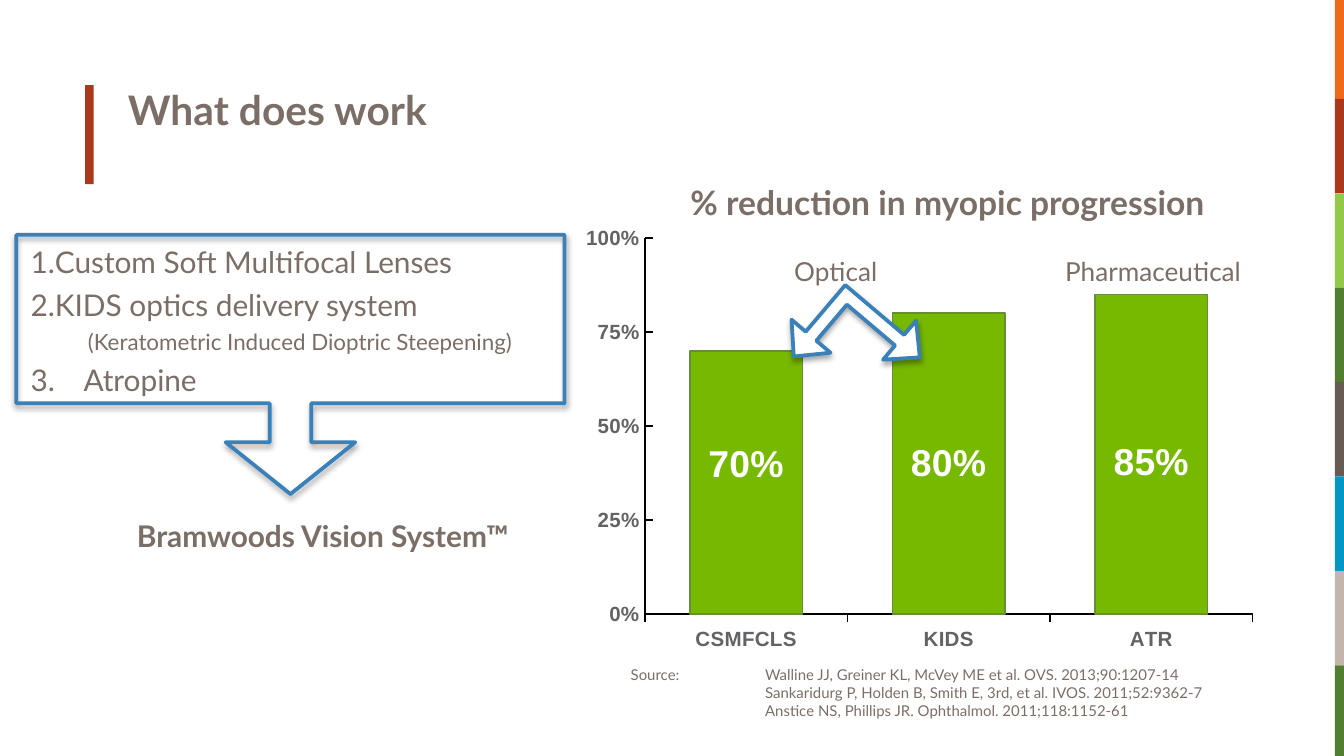
from dataclasses import dataclass

import lxml.etree
import pptx
import pptx.chart.data
import pptx.dml.color
import pptx.enum.chart
import pptx.enum.shapes
import pptx.enum.text
import pptx.oxml
import pptx.oxml.ns
import pptx.util

Cm = pptx.util.Cm
Pt = pptx.util.Pt
SHAPE = pptx.enum.shapes.MSO_SHAPE
ANCHOR = pptx.enum.text.MSO_ANCHOR
TICK = pptx.enum.chart.XL_TICK_MARK
CENTER_LABEL = pptx.enum.chart.XL_LABEL_POSITION.CENTER
NAMESPACES = pptx.oxml.ns.nsdecls("a", "c")


@dataclass(frozen=True)
class Theme:
    text_font: str = "Lato"
    chart_font: str = "Arial"
    text: str = "7B6E66"
    accent: str = "AB371D"
    white: str = "FFFFFF"
    arrow_line: str = "3A81BA"
    bar: str = "77B800"
    bar_line: str = "658D3C"
    axis_text: str = "616365"
    axis_line: str = "000000"
    rail: tuple = ("EF6B1A", "AB371D", "94C84B", "537D2F",
                   "675B54", "0097C4", "C2B6AC", "537D2F")
    title_size: float = 21.8
    heading_size: float = 18
    body_size: float = 16
    label_size: float = 14
    note_size: float = 12
    source_size: float = 8
    axis_size: float = 11
    value_size: float = 20


@dataclass(frozen=True)
class Item:
    """A list line; number is its ordinal or None, indent is in cm."""
    text: str
    indent: float
    size: float
    number: int | None = None


def rgb(value):
    return pptx.dml.color.RGBColor.from_string(value)


def manual_layout(inner, **fractions):
    """Layout element in fractions of the chart; without inner, an offset."""
    target = ('<c:layoutTarget val="inner"/><c:xMode val="edge"/><c:yMode val="edge"/>'
              if inner else "")
    sizes = "".join(f'<c:{key} val="{value}"/>' for key, value in fractions.items())
    return pptx.oxml.parse_xml(
        f'<c:layout {NAMESPACES}><c:manualLayout>{target}{sizes}</c:manualLayout></c:layout>')


class SlideBuilder:
    def __init__(self, page, theme):
        self.page = page
        self.theme = theme

    def style_font(self, font, size, color, bold=False, name=None):
        font.name = name or self.theme.text_font
        font.size = Pt(size)
        font.bold = bold
        font.color.rgb = rgb(color)

    def bar(self, left, top, width, height, color):
        block = self.page.shapes.add_shape(
            SHAPE.RECTANGLE, Cm(left), Cm(top), Cm(width), Cm(height))
        block.shadow.inherit = False
        block.fill.solid()
        block.fill.fore_color.rgb = rgb(color)
        block.line.fill.background()

    def text(self, left, top, width, height, content, size, bold=False,
             inset=0.25, anchor=ANCHOR.TOP, tab=None):
        box = self.page.shapes.add_textbox(Cm(left), Cm(top), Cm(width), Cm(height))
        frame = box.text_frame
        frame.word_wrap = True
        frame.vertical_anchor = anchor
        frame.margin_left = frame.margin_right = Cm(inset)
        frame.margin_top = frame.margin_bottom = Cm(inset)
        frame.text = content
        for para in frame.paragraphs:
            if tab:
                para._p.get_or_add_pPr().append(pptx.oxml.parse_xml(
                    f'<a:tabLst {NAMESPACES}><a:tab pos="{Cm(tab)}" algn="l"/></a:tabLst>'))
            for span in para.runs:
                self.style_font(span.font, size, self.theme.text, bold)
        return frame

    def numbered_list(self, left, top, width, height, items):
        frame = self.text(left, top, width, height,
                          "\n".join(item.text for item in items), self.theme.body_size)
        for para, item in zip(frame.paragraphs, items):
            para.line_spacing = 1.2
            properties = para._p.get_or_add_pPr()
            properties.set("marL", str(Cm(item.indent)))
            if item.number:
                properties.set("indent", str(-Cm(item.indent)))
                # Only a number that follows an interruption states its start.
                start = ' startAt="3"' if item.number == 3 else ""
                properties.append(pptx.oxml.parse_xml(
                    f'<a:buAutoNum {NAMESPACES} type="arabicPeriod"{start}/>'))
            for span in para.runs:
                span.font.size = Pt(item.size)

    def arrow(self, kind, left, top, width, height, adjustments, fill=None, rotation=0):
        arrow = self.page.shapes.add_shape(kind, Cm(left), Cm(top), Cm(width), Cm(height))
        arrow.rotation = rotation
        for index, value in enumerate(adjustments):
            arrow.adjustments[index] = value
        if fill:
            arrow.fill.solid()
            arrow.fill.fore_color.rgb = rgb(fill)
        else:
            arrow.fill.background()
        arrow.line.color.rgb = rgb(self.theme.arrow_line)
        arrow.line.width = Pt(2)
        arrow._element.spPr.append(pptx.oxml.parse_xml(
            f'<a:effectLst {NAMESPACES}><a:outerShdw blurRad="{Pt(3)}" dist="{Pt(1.8)}" '
            'dir="5400000" rotWithShape="0"><a:srgbClr val="000000">'
            '<a:alpha val="35000"/></a:srgbClr></a:outerShdw></a:effectLst>'))

    def column_chart(self, left, top, width, height, categories, values, label_shifts):
        """label_shifts maps a point index to its label's vertical offset."""
        theme = self.theme
        data = pptx.chart.data.CategoryChartData(number_format="0%")
        data.categories = categories
        data.add_series("Series 1", values)
        chart = self.page.shapes.add_chart(
            pptx.enum.chart.XL_CHART_TYPE.COLUMN_STACKED,
            Cm(left), Cm(top), Cm(width), Cm(height), data).chart
        chart.has_legend = False
        chart.has_title = False
        self.style_font(chart.font, 10, theme.axis_line, name=theme.chart_font)

        for axis, tick in ((chart.category_axis, TICK.OUTSIDE), (chart.value_axis, TICK.INSIDE)):
            axis.has_major_gridlines = False
            axis.major_tick_mark = tick
            axis.minor_tick_mark = TICK.NONE
            axis.format.line.color.rgb = rgb(theme.axis_line)
            axis.format.line.width = Pt(1)
            self.style_font(axis.tick_labels.font, theme.axis_size, theme.axis_text,
                            True, theme.chart_font)
        scale = chart.value_axis
        scale.minimum_scale, scale.maximum_scale, scale.major_unit = 0, 1, 0.25
        scale.tick_labels.number_format = "0%"
        scale.tick_labels.number_format_is_linked = False

        plot = chart.plots[0]
        plot.gap_width, plot.overlap = 80, 100
        plot.vary_by_categories = False
        series = plot.series[0]
        series.format.fill.solid()
        series.format.fill.fore_color.rgb = rgb(theme.bar)
        series.format.line.color.rgb = rgb(theme.bar_line)
        series.format.line.width = Pt(1)
        labels = series.data_labels
        labels.show_value = True
        labels.number_format = "0%"
        labels.number_format_is_linked = False
        shifted = {index: series.points[index].data_label for index in label_shifts}
        for label in (labels, *shifted.values()):
            label.position = CENTER_LABEL
            self.style_font(label.font, theme.value_size, theme.white, True, theme.chart_font)
        for entry in labels._element.findall(pptx.oxml.ns.qn("c:dLbl")):
            entry.insert(1, manual_layout(False, x=0, y=label_shifts[entry.idx.val]))

        area = chart._chartSpace.chart.plotArea
        for old in area.findall(pptx.oxml.ns.qn("c:layout")):
            area.remove(old)
        area.insert(0, manual_layout(True, x=0.117, y=0.05, w=0.878, h=0.858))


def main():
    deck = pptx.Presentation()
    deck.slide_width, deck.slide_height = Cm(25.4), Cm(14.29)
    theme = Theme()
    builder = SlideBuilder(deck.slides.add_slide(deck.slide_layouts[6]), theme)

    builder.bar(1.61, 1.61, 0.16, 1.87, theme.accent)
    first_height, rail_bottom = 1.87, 14.36
    step = (rail_bottom - first_height) / (len(theme.rail) - 1)
    for index, color in enumerate(theme.rail):
        top = first_height + (index - 1) * step if index else 0
        builder.bar(25.23, top, 0.38, step if index else first_height, color)

    builder.column_chart(10.66, 4.09, 13.08, 8.28, ("CSMFCLS", "KIDS", "ATR"),
                         (0.7, 0.8, 0.85), {0: -0.04, 2: 0.02})
    builder.text(2.17, 1.35, 22.3, 2.39, "What does work", theme.title_size, True)
    builder.numbered_list(0.33, 4.22, 10.2, 3.4, (
        Item("Custom Soft Multifocal Lenses", 0.46, theme.body_size, 1),
        Item("KIDS optics delivery system", 0.46, theme.body_size, 2),
        Item("(Keratometric Induced Dioptric Steepening)", 1.08, theme.note_size),
        Item("Atropine", 1, theme.body_size, 3)))
    builder.text(2.34, 9.53, 9, 1.2, "Bramwoods Vision System™", theme.body_size, True)
    builder.text(12.8, 3.19, 12.27, 2.39, "% reduction in myopic progression",
                 theme.heading_size, True)
    builder.text(11.79, 12.45, 13, 1.27,
                 "Source: \tWalline JJ, Greiner KL, McVey ME et al. OVS. 2013;90:1207‐14\n"
                 "\tSankaridurg P, Holden B, Smith E, 3rd, et al. IVOS. 2011;52:9362‐7\n"
                 "\tAnstice NS, Phillips JR. Ophthalmol. 2011;118:1152‐61",
                 theme.source_size, inset=0.13, anchor=ANCHOR.MIDDLE, tab=2.54)
    for left, label in ((14.88, "Optical"), (20, "Pharmaceutical")):
        builder.text(left, 4.7, 4.5, 0.86, label, theme.label_size, inset=0.13)

    builder.arrow(SHAPE.DOWN_ARROW_CALLOUT, 0.31, 4.44, 10.36, 4.9, (0.16, 0.25, 0.2, 0.65))
    builder.arrow(SHAPE.LEFT_UP_ARROW, 15.01, 5.4, 2.31, 2.01, (0.13, 0.24, 0.25),
                  fill=theme.white, rotation=220.3)
    deck.save("out.pptx")


if __name__ == "__main__":
    main()
